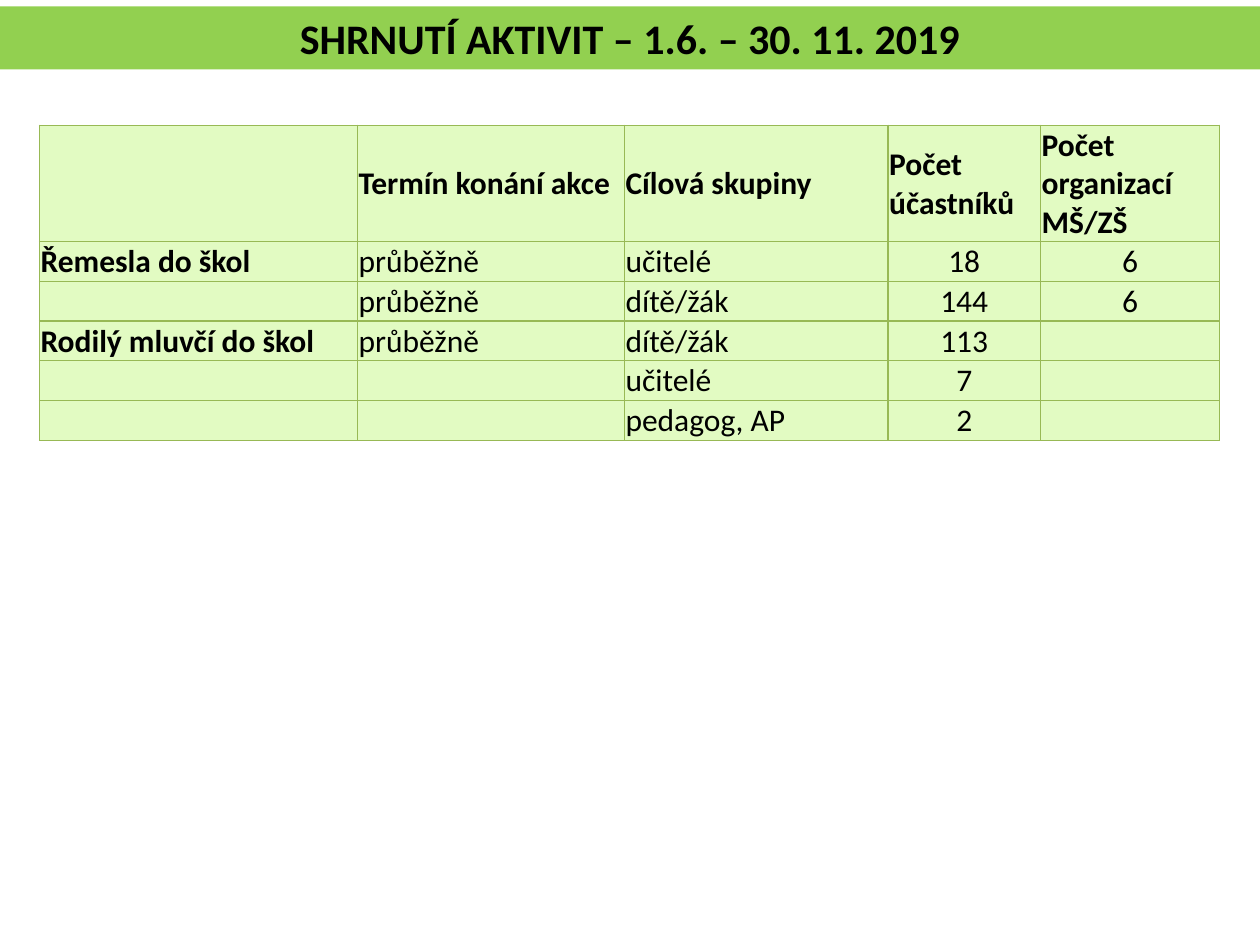
from lxml import etree
from pptx import Presentation
from pptx.dml.color import RGBColor
from pptx.enum.text import MSO_ANCHOR, MSO_AUTO_SIZE, PP_ALIGN
from pptx.oxml.ns import qn
from pptx.util import Pt

MIDDLE, BOTTOM = MSO_ANCHOR.MIDDLE, MSO_ANCHOR.BOTTOM
LEFT, CENTER = PP_ALIGN.LEFT, PP_ALIGN.CENTER
NO_AUTOFIT = MSO_AUTO_SIZE.NONE

THEME = {
    "font": "Calibri",
    "text": RGBColor.from_string("000000"),
    "banner": RGBColor.from_string("92D050"),
    "cell": RGBColor.from_string("E2FBC2"),
    "border": "98B955",
    "title_size": Pt(24),
    "table_size": Pt(18),
}


def style_paragraph(paragraph, size, bold, alignment):
    paragraph.alignment = alignment
    paragraph.font.name = THEME["font"]
    paragraph.font.size = size
    paragraph.font.bold = bold
    paragraph.font.color.rgb = THEME["text"]


def add_borders(cell):
    properties = cell._tc.get_or_add_tcPr()
    for position, side in enumerate(("a:lnL", "a:lnR", "a:lnT", "a:lnB")):
        line = etree.Element(qn(side), w=str(Pt(0.75)))
        fill = etree.SubElement(line, qn("a:solidFill"))
        etree.SubElement(fill, qn("a:srgbClr"), val=THEME["border"])
        properties.insert(position, line)


prs = Presentation()
prs.slide_width, prs.slide_height = Pt(720), Pt(540)
slide = prs.slides.add_slide(prs.slide_layouts[5])

banner = slide.shapes.title
banner.left, banner.top, banner.width, banner.height = Pt(0), Pt(3.6), Pt(720), Pt(36)
banner.fill.solid()
banner.fill.fore_color.rgb = THEME["banner"]
banner.text_frame.text = "SHRNUTÍ AKTIVIT – 1.6. – 30. 11. 2019"
banner.text_frame.auto_size = NO_AUTOFIT
banner.text_frame.vertical_anchor = MIDDLE
style_paragraph(banner.text_frame.paragraphs[0], THEME["title_size"], True, CENTER)

activities = [
    ["", "Termín konání akce", "Cílová skupiny", "Počet účastníků", "Počet organizací MŠ/ZŠ"],
    ["Řemesla do škol", "průběžně", "učitelé", "18", "6"],
    ["", "průběžně", "dítě/žák", "144", "6"],
    ["Rodilý mluvčí do škol", "průběžně", "dítě/žák", "113", ""],
    ["", "", "učitelé", "7", ""],
    ["", "", "pedagog, AP", "2", ""],
]
column_widths = [181.7, 152.6, 150.7, 87.1, 102.5]
row_heights = [65.5] + [22.3] * 5

summary = slide.shapes.add_table(
    len(activities), len(column_widths),
    Pt(22.5), Pt(71.5), Pt(sum(column_widths)), Pt(sum(row_heights)),
).table
for column, width in zip(summary.columns, column_widths):
    column.width = Pt(width)
for row, height in zip(summary.rows, row_heights):
    row.height = Pt(height)

for r, activity in enumerate(activities):
    for c, value in enumerate(activity):
        cell = summary.cell(r, c)
        cell.text = value
        cell.margin_left = cell.margin_right = cell.margin_top = Pt(0.7)
        cell.margin_bottom = Pt(0)
        cell.vertical_anchor = MIDDLE if r == 0 else BOTTOM
        cell.fill.solid()
        cell.fill.fore_color.rgb = THEME["cell"]
        add_borders(cell)
        style_paragraph(
            cell.text_frame.paragraphs[0],
            THEME["table_size"],
            r == 0 or c == 0,
            CENTER if r > 0 and c >= 3 else LEFT,
        )

prs.save("out.pptx")
